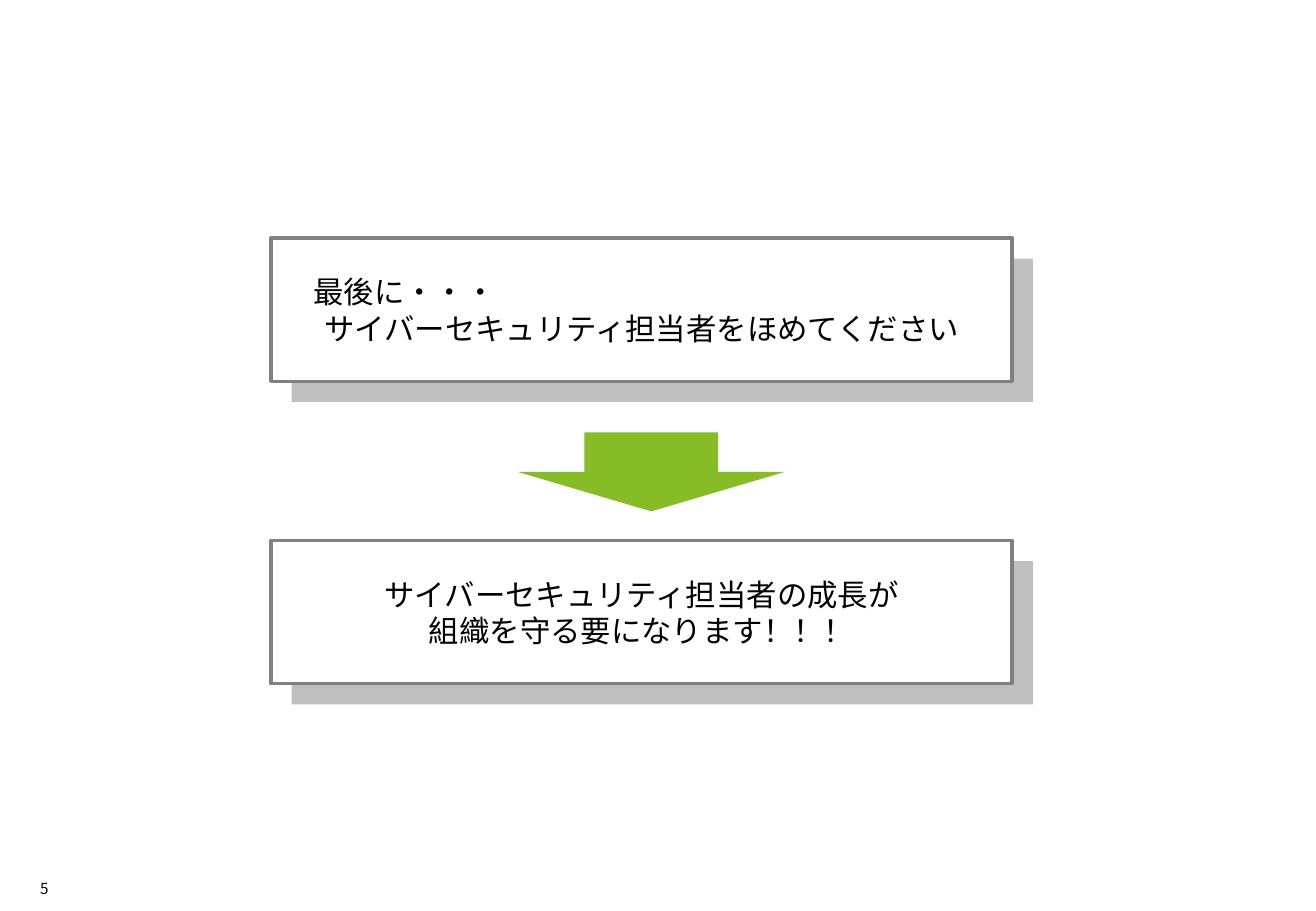
from dataclasses import dataclass

from lxml import etree
from pptx import Presentation
from pptx.dml.color import RGBColor
from pptx.enum.shapes import MSO_SHAPE
from pptx.enum.text import MSO_ANCHOR, PP_ALIGN
from pptx.oxml.ns import qn
from pptx.util import Pt

RECTANGLE = MSO_SHAPE.RECTANGLE
DOWN_ARROW = MSO_SHAPE.DOWN_ARROW
LEFT, CENTER, RIGHT = PP_ALIGN.LEFT, PP_ALIGN.CENTER, PP_ALIGN.RIGHT
MIDDLE, BOTTOM = MSO_ANCHOR.MIDDLE, MSO_ANCHOR.BOTTOM

EMU_PER_PX = 9144  # 100 px to the inch
FONT = "Noto Sans CJK JP"
COLORS = {
    "text": "000000",
    "panel": "FFFFFF",
    "border": "808080",
    "shadow": "BFBFBF",
    "arrow": "86BC25",
}
PANEL_LEFT, PANEL_WIDTH, PANEL_HEIGHT = 223, 610, 118
SHADOW_OFFSET = 17


@dataclass(frozen=True)
class Line:
    text: str
    align: PP_ALIGN = CENTER
    indent: int = 0


@dataclass(frozen=True)
class Panel:
    top: int
    lines: tuple[Line, ...]


PANELS = (
    Panel(196, (
        Line("最後に・・・", align=LEFT, indent=25),
        Line("サイバーセキュリティ担当者をほめてください"),
    )),
    Panel(445, (
        Line("サイバーセキュリティ担当者の成長が"),
        Line("組織を守る要になります！！！"),
    )),
)


def px(length: int) -> int:
    return length * EMU_PER_PX


def color(name: str) -> RGBColor:
    return RGBColor.from_string(COLORS[name])


def add_block(slide, kind, left: int, top: int, width: int, height: int,
              fill: str, border: str | None = None):
    shape = slide.shapes.add_shape(kind, px(left), px(top), px(width), px(height))
    shape.shadow.inherit = False
    shape.fill.solid()
    shape.fill.fore_color.rgb = color(fill)
    if border:
        shape.line.color.rgb = color(border)
        shape.line.width = Pt(2)
    else:
        shape.line.fill.background()
    return shape


def write_line(paragraph, text: str, *, size: int, align: PP_ALIGN,
               indent: int = 0) -> None:
    paragraph.alignment = align
    if indent:
        paragraph._p.get_or_add_pPr().set("marL", str(px(indent)))
    run = paragraph.add_run()
    run.text = text
    run.font.size = Pt(size)
    run.font.name = FONT
    run.font.color.rgb = color("text")
    # Japanese glyphs take the East Asian font
    east_asian = etree.SubElement(run._r.get_or_add_rPr(), qn("a:ea"))
    east_asian.set("typeface", FONT)


def add_panel(slide, panel: Panel) -> None:
    add_block(slide, RECTANGLE, PANEL_LEFT + SHADOW_OFFSET, panel.top + SHADOW_OFFSET,
              PANEL_WIDTH, PANEL_HEIGHT, "shadow")
    shape = add_block(slide, RECTANGLE, PANEL_LEFT, panel.top,
                      PANEL_WIDTH, PANEL_HEIGHT, "panel", "border")
    frame = shape.text_frame
    frame.word_wrap = True
    frame.vertical_anchor = MIDDLE
    for index, line in enumerate(panel.lines):
        paragraph = frame.add_paragraph() if index else frame.paragraphs[0]
        write_line(paragraph, line.text, size=18, align=line.align, indent=line.indent)


def add_page_number(slide, number: str) -> None:
    frame = slide.shapes.add_textbox(px(20), px(720), px(20), px(19)).text_frame
    frame.margin_left = frame.margin_right = frame.margin_top = frame.margin_bottom = 0
    frame.word_wrap = True
    frame.vertical_anchor = BOTTOM
    write_line(frame.paragraphs[0], number, size=9, align=RIGHT)


def main() -> None:
    presentation = Presentation()
    presentation.slide_width, presentation.slide_height = px(1083), px(750)
    slide = presentation.slides.add_slide(presentation.slide_layouts[6])

    # Message panels with their offset shadows
    for panel in PANELS:
        add_panel(slide, panel)

    # Arrow between the panels
    add_block(slide, DOWN_ARROW, 426, 356, 220, 65, "arrow")

    # Footer
    add_page_number(slide, "5")
    presentation.save("out.pptx")


if __name__ == "__main__":
    main()
